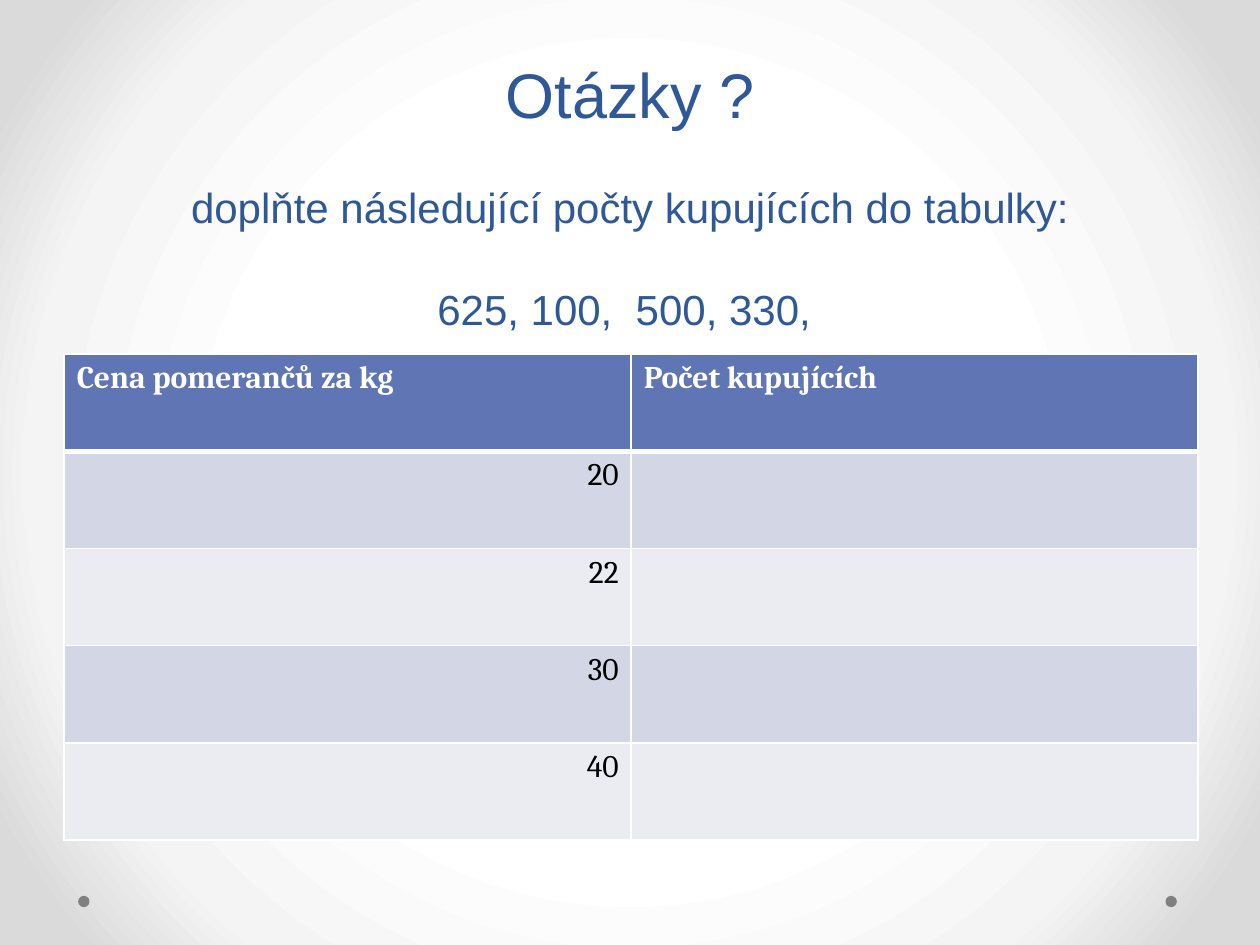
from lxml import etree
from pptx import Presentation, util as u
from pptx.dml.color import RGBColor
from pptx.enum import shapes, text
from pptx.oxml import parse_xml
from pptx.oxml.ns import nsdecls, qn

BLUE = RGBColor(0x2F, 0x58, 0x97)
HEADER = RGBColor(0x60, 0x76, 0xB4)
BANDS = (RGBColor(0xEA, 0xEC, 0xF2), RGBColor(0xD2, 0xD6, 0xE5))
WHITE = RGBColor(0xFF, 0xFF, 0xFF)
BLACK = RGBColor(0x00, 0x00, 0x00)
GREY = RGBColor(0x80, 0x80, 0x80)
GLOW = ((50, WHITE), (76, RGBColor(0xF4, 0xF4, 0xF4)), (92, RGBColor(0xDA, 0xDA, 0xDA)))

WIDTH, HEIGHT = u.Inches(10), u.Inches(7.5)
HEADINGS = ("Cena pomerančů za kg", "Počet kupujících")
PRICES = ("20", "22", "30", "40")
TITLE_LINES = (
    ("Otázky ?", 36),
    ("doplňte následující počty kupujících do tabulky:", 24),
    ("625, 100,  500, 330, ", 24),
)


def paint_background(page):
    """Fill the page with a radial glow, white in the middle."""
    page.background.fill.solid()
    stops = "".join(
        f'<a:gs pos="{share * 1000}"><a:srgbClr val="{color}"/></a:gs>' for share, color in GLOW
    )
    glow = parse_xml(
        f'<a:gradFill {nsdecls("a")} rotWithShape="1"><a:gsLst>{stops}</a:gsLst>'
        '<a:path path="circle"><a:fillToRect l="50000" t="50000" r="50000" b="50000"/></a:path>'
        "</a:gradFill>"
    )
    solid = page.element.xpath(".//p:bgPr/a:solidFill")[0]
    solid.getparent().replace(solid, glow)


def add_dots(page, left, top, size, gap):
    """Draw the two footer dots, their left edges a gap apart."""
    for step in range(2):
        dot = page.shapes.add_shape(shapes.MSO_SHAPE.OVAL, left + step * gap, top, size, size)
        dot.shadow.inherit = False
        dot.fill.solid()
        dot.fill.fore_color.rgb = GREY
        dot.line.fill.background()


def fill_title(page, left, top, width, height):
    """Place the heading and the task in the title placeholder."""
    title = page.shapes.title
    title.left, title.top, title.width, title.height = left, top, width, height
    frame = title.text_frame
    frame.auto_size = text.MSO_AUTO_SIZE.NONE
    frame.vertical_anchor = text.MSO_ANCHOR.BOTTOM
    frame.margin_bottom = u.Inches(1.66)
    para = frame.paragraphs[0]
    para.text = "\v".join(line for line, size in TITLE_LINES)
    para.alignment = text.PP_ALIGN.CENTER
    para.line_spacing = u.Pt(58)
    for span, (line, size) in zip(para.runs, TITLE_LINES):
        span.font.name = "Arial"
        span.font.size = u.Pt(size)
        span.font.color.rgb = BLUE


def border_cell(cell, **widths):
    """Give a cell white borders, with widths in points by side."""
    properties = cell._tc.get_or_add_tcPr()
    for side in "LRTB":
        line = etree.SubElement(properties, qn(f"a:ln{side}"), w=str(u.Pt(widths.get(side, 1))))
        fill = etree.SubElement(line, qn("a:solidFill"))
        etree.SubElement(fill, qn("a:srgbClr"), val=str(WHITE))


def fill_cell(cell, words, is_header, band):
    """Write one cell and set its look."""
    border_cell(cell, B=3 if is_header else 1)
    cell.fill.solid()
    cell.fill.fore_color.rgb = HEADER if is_header else band
    para = cell.text_frame.paragraphs[0]
    para.text = words
    para.alignment = text.PP_ALIGN.LEFT if is_header else text.PP_ALIGN.RIGHT
    para.font.size = u.Pt(18)
    for span in para.runs:
        span.font.name = "Cambria"
        span.font.size = u.Pt(18)
        span.font.bold = is_header
        span.font.color.rgb = WHITE if is_header else BLACK


def add_price_table(page, left, top, width, height):
    """Add the table of prices with an empty column for the answers."""
    rows = [HEADINGS] + [(price, "") for price in PRICES]
    table = page.shapes.add_table(len(rows), len(HEADINGS), left, top, width, height).table
    for number, row in enumerate(rows):
        for column, words in enumerate(row):
            fill_cell(table.cell(number, column), words, number == 0, BANDS[number % 2])


def main():
    """Build the question slide and save it."""
    deck = Presentation()
    deck.slide_width, deck.slide_height = WIDTH, HEIGHT
    page = deck.slides.add_slide(deck.slide_layouts[5])
    paint_background(page)
    add_dots(page, u.Inches(0.62), u.Inches(7.11), u.Inches(0.09), u.Inches(8.63))
    fill_title(page, u.Inches(0.5), u.Inches(-0.34), u.Inches(9), u.Inches(4.65))
    add_price_table(page, u.Inches(0.51), u.Inches(2.81), u.Inches(9), u.Inches(3.86))
    deck.save("out.pptx")


if __name__ == "__main__":
    main()
